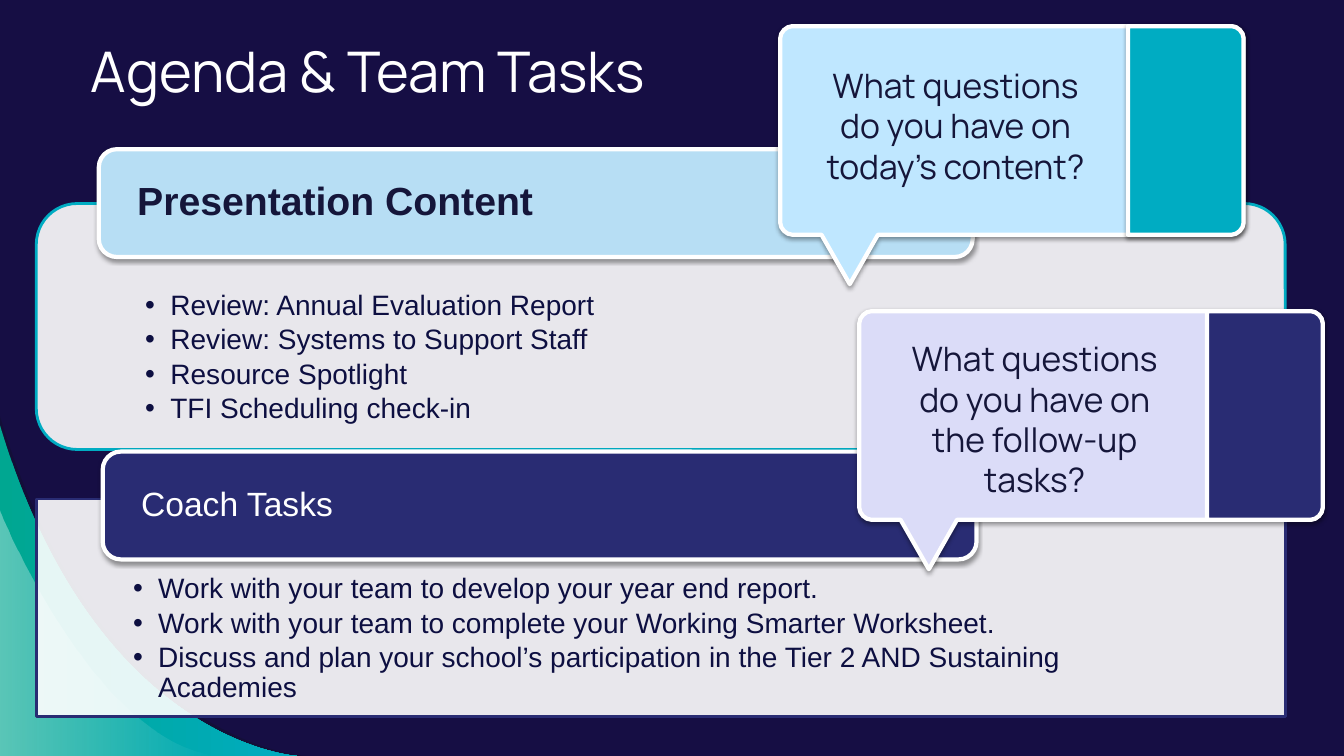
from lxml.etree import SubElement
from pptx import Presentation
from pptx.dml.color import RGBColor
from pptx.enum.shapes import MSO_SHAPE as Preset
from pptx.enum.text import MSO_ANCHOR as Anchor, MSO_AUTO_SIZE as AutoSize, PP_ALIGN as Align
from pptx.oxml.ns import qn
from pptx.util import Pt

COLORS = {
    "night": "160E44", "shade": "12102F", "teal": "00ACC2", "green": "00A791",
    "white": "FFFFFF", "sky": "B7DEF4", "navy": "292C73", "ink": "15163A",
    "body": "0D0F41", "ice": "BFE7FF", "lilac": "DBDCF8", "black": "000000",
}


def color(name):
    return RGBColor.from_string(COLORS[name])


def write_text(shape, lines, size, ink, font="Arial", bold=False, align=Align.LEFT,
               anchor=Anchor.TOP, insets=(7.2, 3.6, 7.2, 3.6), bullet=False,
               spacing=1.0, after=0, auto_size=AutoSize.NONE):
    frame = shape.text_frame
    frame.word_wrap = True
    frame.auto_size = auto_size
    frame.vertical_anchor = anchor
    frame.margin_left, frame.margin_top, frame.margin_right, frame.margin_bottom = map(Pt, insets)
    for index, line in enumerate(lines):
        paragraph = frame.add_paragraph() if index else frame.paragraphs[0]
        paragraph.alignment = align
        paragraph.line_spacing = spacing
        paragraph.space_before = Pt(0)
        paragraph.space_after = Pt(after)
        if bullet:
            paragraph.level = 1
            properties = paragraph._p.get_or_add_pPr()
            properties.set("marL", str(Pt(18)))
            properties.set("indent", str(Pt(-18)))
            SubElement(properties, qn("a:buFont")).set("typeface", font)
            SubElement(properties, qn("a:buChar")).set("char", "•")
        run = paragraph.add_run()
        run.text = line
        run.font.name = font
        run.font.size = Pt(size)
        run.font.bold = bold
        run.font.color.rgb = color(ink)


class SlideBuilder:
    callout_width, callout_height, radius, panel_left = 331, 149, 8.64, 248.4

    def __init__(self, presentation):
        self.slide = presentation.slides.add_slide(presentation.slide_layouts[5])
        self.shapes = self.slide.shapes
        self.slide.background.fill.solid()
        self.slide.background.fill.fore_color.rgb = color("night")

    def title(self, text, box):
        shape = self.shapes.title
        shape.left, shape.top, shape.width, shape.height = map(Pt, box)
        write_text(shape, [text], 40, "white", font="Manrope", anchor=Anchor.MIDDLE,
                   insets=(7.2, 5.8, 7.2, 8.6))

    def style(self, shape, fill, opacity=100, line=None, width=3, shadow=False):
        shape.fill.solid()
        shape.fill.fore_color.rgb = color(fill)
        if opacity < 100:
            self.set_alpha(shape.element.spPr.find(qn("a:solidFill"))[0], opacity)
        if line:
            shape.line.color.rgb = color(line)
            shape.line.width = Pt(width)
        else:
            shape.line.fill.background()
        shape.shadow.inherit = False
        if shadow:
            effects = shape.element.spPr.find(qn("a:effectLst"))
            outer = SubElement(effects, qn("a:outerShdw"), blurRad=str(Pt(3.1)),
                               dist=str(Pt(1.6)), dir="5400000", rotWithShape="0")
            self.set_alpha(SubElement(outer, qn("a:srgbClr"), val=COLORS["black"]), 38)
        return shape

    def set_alpha(self, element, opacity):
        SubElement(element, qn("a:alpha")).set("val", str(opacity * 1000))

    def box(self, preset, box, fill, **look):
        return self.style(self.shapes.add_shape(preset, *map(Pt, box)), fill, **look)

    def text(self, box, lines, size, ink, **layout):
        write_text(self.shapes.add_textbox(*map(Pt, box)), lines, size, ink, **layout)

    def outline(self, start, steps, fill, **look):
        builder = self.shapes.build_freeform(*map(Pt, start))
        builder.add_line_segments([tuple(map(Pt, step[-2:])) for step in steps], close=True)
        shape = builder.convert_to_shape()
        segments = list(shape.element.spPr.iter(qn("a:lnTo")))
        for segment, step in zip(segments, steps):
            if len(step) == 6:
                self.bend(shape, segment, step)
        return self.style(shape, fill, **look)

    def bend(self, shape, segment, step):
        segment.tag = qn("a:cubicBezTo")
        for x, y in reversed((step[:2], step[2:4])):
            point = SubElement(segment, qn("a:pt"), x=str(Pt(x) - shape.left),
                               y=str(Pt(y) - shape.top))
            segment.insert(0, point)

    def wave(self, start, steps, stops):
        shape = self.outline(start, steps, "teal")
        shape.fill.gradient()
        shape.fill.gradient_angle = 0
        for stop, (name, opacity) in zip(shape.fill.gradient_stops, stops):
            stop.color.rgb = color(name)
        elements = shape.element.spPr.iter(qn("a:srgbClr"))
        for element, (name, opacity) in zip(elements, stops):
            if opacity < 100:
                self.set_alpha(element, opacity)

    def section(self, preset, card, line, text_box, tasks):
        self.box(preset, card, "white", opacity=90, line=line, width=2)
        self.text(text_box, tasks, 20, "body", bullet=True, spacing=0.9, after=3,
                  insets=(69.1, 54, 69.1, 11.5))

    def heading(self, left, top, text, fill, size, ink, bold=False):
        self.box(Preset.ROUNDED_RECTANGLE, (left, top, 624.2, 77), fill,
                 line="white", shadow=True)
        self.text((left + 3.6, top + 3.9, 617, 69.1), [text], size, ink, bold=bold,
                  anchor=Anchor.MIDDLE, insets=(23.8, 0, 23.8, 0), spacing=0.9)

    def callout(self, left, top, question, text_box, fill, panel, panel_shadow):
        right, bottom = left + self.callout_width, top + self.callout_height
        r, k = self.radius, self.radius / 2
        start = (right - r, top)
        right_side = [
            (right - k, top, right, top + k, right, top + r),
            (right, bottom - r),
            (right, bottom - k, right - k, bottom, right - r, bottom),
        ]
        tail = [(left + 69.8, bottom), (left + 49.7, bottom + 35.3), (left + 29.5, bottom)]
        left_side = [
            (left + r, bottom),
            (left + k, bottom, left, bottom - k, left, bottom - r),
            (left, top + r),
            (left, top + k, left + k, top, left + r, top),
        ]
        divider = [(left + self.panel_left, bottom), (left + self.panel_left, top)]
        self.outline(start, right_side + tail + left_side, fill, line="white", shadow=True)
        self.outline(start, right_side + divider, panel, line="white", shadow=panel_shadow)
        self.text(text_box, [question], 24, "ink", font="Manrope", align=Align.CENTER,
                  anchor=Anchor.MIDDLE, auto_size=AutoSize.SHAPE_TO_FIT_TEXT)


def main():
    presentation = Presentation()
    presentation.slide_width, presentation.slide_height = Pt(960), Pt(540)
    agenda = SlideBuilder(presentation)
    agenda.title("Agenda & Team Tasks", (57.6, 18.7, 738.7, 66.2))

    agenda.outline((0, 297.4), [(70.6, 532.1, 218.2, 540, 218.2, 540), (0, 540)],
                   "shade", opacity=54)
    agenda.wave((212.4, 540), [(212.4, 540, 68.4, 532.1, 0, 303.8), (0, 540)],
                [("green", 100), ("teal", 100)])
    agenda.wave((0, 364.3), [(0, 364.3, 65.5, 529.2, 155.5, 540), (0, 540)],
                [("white", 36), ("white", 0)])

    agenda.section(Preset.ROUNDED_RECTANGLE, (25.9, 145.4, 892.1, 175.7), "teal",
                   (34.6, 154.1, 874.8, 159.1),
                   ["Review: Annual Evaluation Report", "Review: Systems to Support Staff",
                    "Resource Spotlight", "TFI Scheduling check-in"])
    agenda.heading(70.6, 106.6, "Presentation Content", "sky", 28, "ink", bold=True)

    tasks_card = (25.9, 356.4, 892.1, 155.5)
    agenda.section(Preset.RECTANGLE, tasks_card, "navy", tasks_card,
                   ["Work with your team to develop your year end report.",
                    "Work with your team to complete your Working Smarter Worksheet.",
                    "Discuss and plan your school’s participation in the Tier 2 AND "
                    "Sustaining Academies"])
    agenda.heading(73.4, 322.6, "Coach Tasks", "navy", 24, "white")

    agenda.callout(557.3, 18.7, "What questions do you have on today’s content?",
                   (573.1, 42.5, 218.9, 94.3), "ice", "teal", True)
    agenda.callout(613.8, 222.3, "What questions do you have on the follow-up tasks?",
                   (629.6, 237.2, 218.9, 123.8), "lilac", "navy", False)
    presentation.save("out.pptx")


if __name__ == "__main__":
    main()
